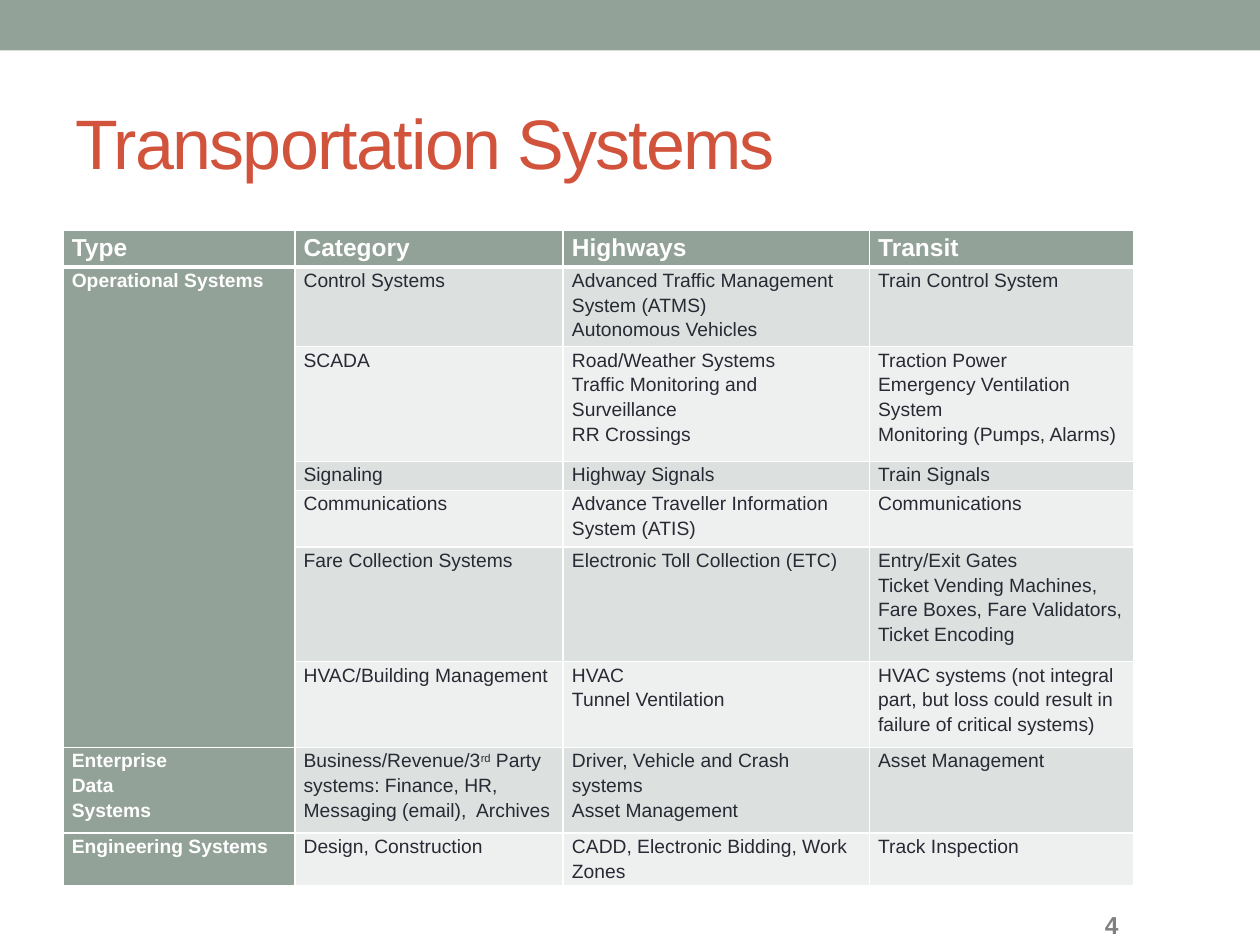
from dataclasses import dataclass
from lxml.etree import SubElement as Sub
from pptx import Presentation
from pptx.dml.color import RGBColor as Rgb
from pptx.enum.shapes import MSO_SHAPE as Shape
from pptx.enum.text import MSO_ANCHOR as Anchor
from pptx.oxml.ns import qn
from pptx.util import Inches, Pt


@dataclass(frozen=True)
class Theme:
    font: str = "Arial"
    sage: str = "93A299"
    rust: str = "D2533C"
    ink: str = "292934"
    gray: str = "808080"
    white: str = "FFFFFF"
    bands: tuple = ("DCE0DE", "EEF0EF")
    title: int = 40
    head: int = 14
    body: int = 11


THEME = Theme()
COLS = [1.84, 2.13, 2.43, 2.1]
ROWS = [0.29, 0.58, 0.91, 0.23, 0.45, 0.91, 0.68, 0.68, 0.39]
ORDINAL = "3rd"

# One row per system; a line break starts a new paragraph
CELLS = [
    ["Type", "Category", "Highways", "Transit"],
    ["Operational Systems", "Control Systems",
     "Advanced Traffic Management System (ATMS)\nAutonomous Vehicles",
     "Train Control System"],
    ["", "SCADA",
     "Road/Weather Systems\nTraffic Monitoring and Surveillance\nRR Crossings",
     "Traction Power\nEmergency Ventilation System\nMonitoring (Pumps, Alarms)"],
    ["", "Signaling", "Highway Signals", "Train Signals"],
    ["", "Communications", "Advance Traveller Information System (ATIS)",
     "Communications"],
    ["", "Fare Collection Systems", "Electronic Toll Collection (ETC)",
     "Entry/Exit Gates\nTicket Vending Machines, Fare Boxes, "
     "Fare Validators, Ticket Encoding"],
    ["", "HVAC/Building Management", "HVAC\nTunnel Ventilation",
     "HVAC systems (not integral part, but loss could result in "
     "failure of critical systems)"],
    ["Enterprise\nData\nSystems",
     "Business/Revenue/3rd Party systems: Finance, HR, "
     "Messaging (email),  Archives",
     "Driver, Vehicle and Crash systems\nAsset Management", "Asset Management"],
    ["Engineering Systems", "Design, Construction",
     "CADD, Electronic Bidding, Work Zones", "Track Inspection"],
]


def style(run, size, color, bold=False):
    font = run.font
    font.name, font.size, font.bold = THEME.font, Pt(size), bold
    font.color.rgb = Rgb.from_string(color)


def add_bar(slide, x, y, w, h):
    bar = slide.shapes.add_shape(
        Shape.RECTANGLE, Inches(x), Inches(y), Inches(w), Inches(h))
    bar.shadow.inherit = False
    bar.fill.solid()
    bar.fill.fore_color.rgb = Rgb.from_string(THEME.sage)
    bar.line.fill.background()


def add_label(slide, x, y, w, h, text, size, color, bold=False):
    box = slide.shapes.add_textbox(Inches(x), Inches(y), Inches(w), Inches(h))
    frame = box.text_frame
    frame.word_wrap = True
    frame.vertical_anchor = Anchor.MIDDLE
    frame.text = text
    run = frame.paragraphs[0].runs[0]
    style(run, size, color, bold)
    return run


def set_edges(cell, top, bottom):
    props = cell._tc.get_or_add_tcPr()
    edges = [("lnL", 1), ("lnR", 1), ("lnT", top), ("lnB", bottom)]
    for i, (tag, width) in enumerate(edges):
        line = Sub(props, qn(f"a:{tag}"), w=str(Pt(width)))
        fill = Sub(line, qn("a:solidFill"))
        Sub(fill, qn("a:srgbClr"), val=THEME.white)
        props.insert(i, line)


def split_ordinal(para):
    """Raise the letters of the ordinal above the line."""
    before, after = para.text.split(ORDINAL)
    para.text = before + ORDINAL[0]
    raised = para.add_run()
    raised.text = ORDINAL[1:]
    raised._r.get_or_add_rPr().set("baseline", "30000")
    para.add_run().text = after


def fill_cell(cell, text, row, col):
    head, strong = row == 0, row == 0 or col == 0
    cell.margin_left = cell.margin_right = Inches(0.07)
    cell.margin_top = cell.margin_bottom = 0
    cell.fill.solid()
    cell.fill.fore_color.rgb = Rgb.from_string(
        THEME.sage if strong else THEME.bands[(row - 1) % 2])
    set_edges(cell, 3 if row == 1 else 1, 3 if head else 1)
    cell.text_frame.text = text
    for para in cell.text_frame.paragraphs:
        para.line_spacing = 1.15
        if ORDINAL in para.text:
            split_ordinal(para)
        para.font.size = Pt(THEME.body)
        for run in para.runs:
            style(run, THEME.head if head else THEME.body,
                  THEME.white if strong else THEME.ink, strong)


def add_grid(slide, x, y):
    table = slide.shapes.add_table(
        len(ROWS), len(COLS), Inches(x), Inches(y),
        Inches(sum(COLS)), Inches(sum(ROWS))).table
    for col, width in zip(table.columns, COLS):
        col.width = Inches(width)
    for row, height in zip(table.rows, ROWS):
        row.height = Inches(height)
    for r, texts in enumerate(CELLS):
        for c, text in enumerate(texts):
            fill_cell(table.cell(r, c), text, r, c)
    # Operational Systems spans its six categories
    table.cell(1, 0).merge(table.cell(6, 0))


def main():
    deck = Presentation()
    deck.slide_width, deck.slide_height = Inches(10), Inches(7.5)
    slide = deck.slides.add_slide(deck.slide_layouts[6])

    # Top bar and title
    add_bar(slide, 0, 0, 10, 0.4)
    title = add_label(slide, 0.5, 0.58, 9.5, 1.08, "Transportation Systems",
                      THEME.title, THEME.rust)
    title._r.get_or_add_rPr().set("spc", "-100")

    # Systems table
    add_grid(slide, 0.5, 1.83)

    # Page number
    add_label(slide, 8.67, 7.16, 1.17, 0.36, "4", THEME.head, THEME.gray, True)
    deck.save("out.pptx")


if __name__ == "__main__":
    main()
